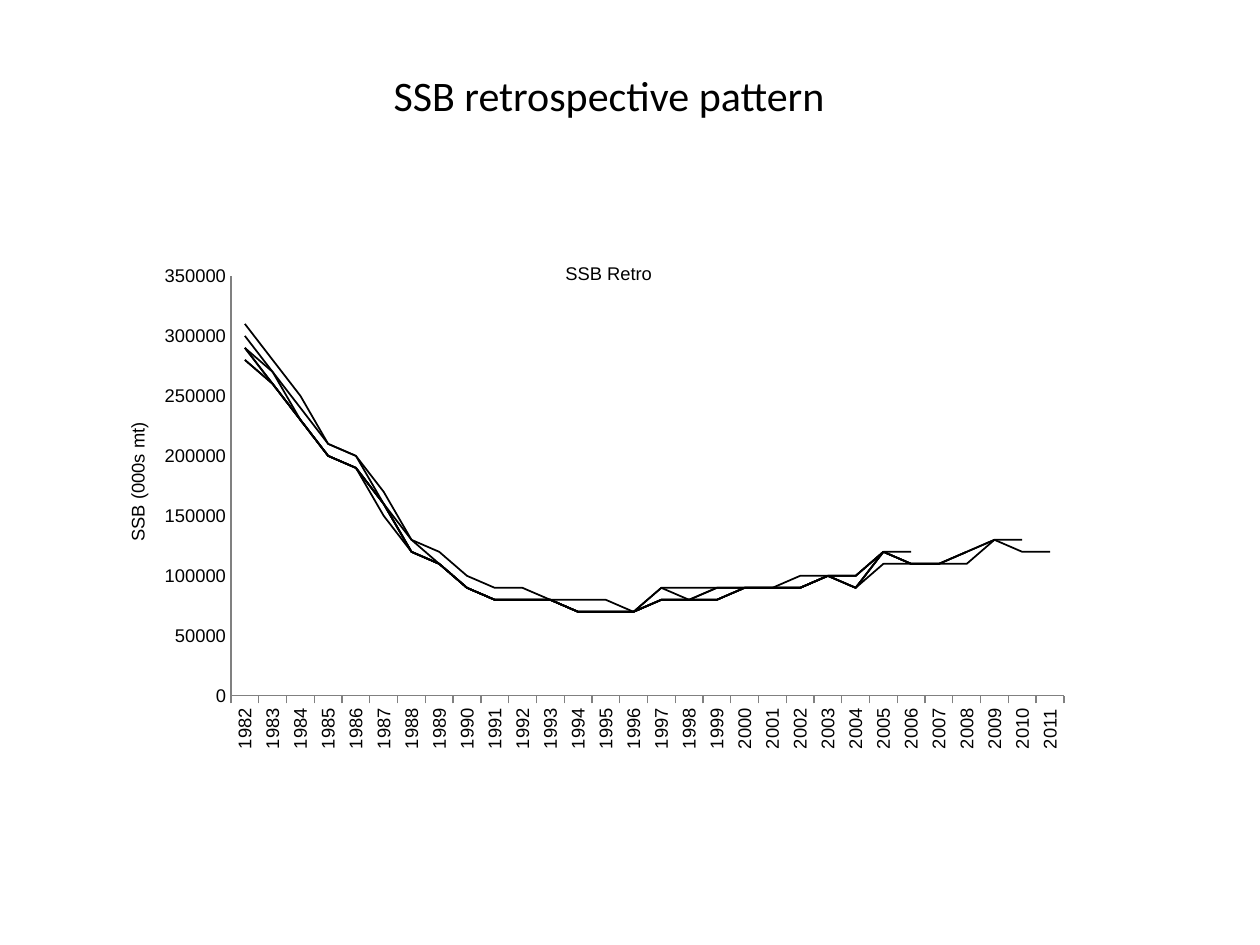
"""Build the slide with the SSB retrospective line chart."""
from dataclasses import dataclass

from lxml import etree
from pptx import Presentation
from pptx import util as u
from pptx.chart.data import CategoryChartData
from pptx.dml.color import RGBColor
from pptx.enum import chart as charts, text
from pptx.oxml.ns import qn

EMU_PER_PX = 914400 / 126
FIRST_YEAR, LAST_YEAR = 1982, 2011
VALUE_STEP = 10000


@dataclass(frozen=True)
class Theme:
    ink: RGBColor = RGBColor(0, 0, 0)
    axis: RGBColor = RGBColor(0x80, 0x80, 0x80)
    heading_font: str = "Calibri"
    chart_font: str = "Arial"
    heading_size: float = 24
    chart_size: float = 10.5
    line_width: float = 1


@dataclass(frozen=True)
class Box:
    left: int
    top: int
    width: int
    height: int

    def emu(self) -> tuple:
        return tuple(px(n) for n in (self.left, self.top, self.width, self.height))


@dataclass(frozen=True)
class Run:
    name: str
    steps: tuple


THEME = Theme()
HEADING_BOX = Box(315, 63, 588, 63)
CHART_BOX = Box(105, 210, 1040, 609)
RUNS = (
    Run("Series 1", (28, 26, 23, 20, 19, 15, 12, 11, 9, 8, 8, 8, 7, 7, 7,
                     8, 8, 8, 9, 9, 9, 10, 10, 12)),
    Run("Series 2", (29, 26, 23, 20, 19, 16, 12, 11, 9, 8, 8, 8, 7, 7, 7,
                     8, 8, 8, 9, 9, 9, 10, 10, 12, 12)),
    Run("Series 3", (29, 26, 23, 20, 19, 16, 12, 11, 9, 8, 8, 8, 7, 7, 7,
                     8, 8, 8, 9, 9, 9, 10, 9, 12, 11, 11)),
    Run("Series 4", (30, 27, 24, 21, 20, 16, 13, 11, 9, 8, 8, 8, 7, 7, 7,
                     9, 8, 9, 9, 9, 9, 10, 9, 12, 11, 11, 12)),
    Run("Series 5", (31, 28, 25, 21, 20, 17, 13, 12, 10, 9, 9, 8, 8, 8, 7,
                     9, 9, 9, 9, 9, 10, 10, 10, 12, 11, 11, 11, 13)),
    Run("Series 6", (29, 27, 23, 20, 19, 16, 12, 11, 9, 8, 8, 8, 7, 7, 7,
                     8, 8, 9, 9, 9, 9, 10, 9, 12, 11, 11, 12, 13, 13)),
    Run("Series 7", (28, 26, 23, 20, 19, 16, 12, 11, 9, 8, 8, 8, 7, 7, 7,
                     8, 8, 8, 9, 9, 9, 10, 9, 11, 11, 11, 12, 13, 12, 12)),
)


def px(length: int) -> u.Emu:
    return u.Emu(round(length * EMU_PER_PX))


def style_font(font, name: str, size: float) -> None:
    font.name, font.size, font.bold = name, u.Pt(size), False
    font.color.rgb = THEME.ink


def place(parent, **lengths: int) -> None:
    layout = parent.find(qn("c:layout"))
    if layout is None:
        layout = etree.Element(qn("c:layout"))
        parent.insert(0, layout)
    manual = etree.SubElement(layout, qn("c:manualLayout"))
    if "w" in lengths:
        etree.SubElement(manual, qn("c:layoutTarget"), val="inner")
    for side in ("x", "y"):
        etree.SubElement(manual, qn(f"c:{side}Mode"), val="edge")
    for key, length in lengths.items():
        whole = CHART_BOX.width if key in "xw" else CHART_BOX.height
        etree.SubElement(manual, qn(f"c:{key}"), val=str(length / whole))


def set_title(title, words: str, x: int, y: int) -> None:
    title.text_frame.text = words
    style_font(title.text_frame.paragraphs[0].runs[0].font, THEME.chart_font, THEME.chart_size)
    holder = title.text_frame._txBody.getparent().getparent()
    place(holder, x=x, y=y)
    holder.find(qn("c:overlay")).set("val", "1")


def turn_upright(body) -> None:
    body.set("rot", "-5400000")
    body.set("vert", "horz")


def style_axis(axis, tick) -> None:
    axis.has_major_gridlines = False
    axis.major_tick_mark = tick
    axis.minor_tick_mark = charts.XL_TICK_MARK.NONE
    axis.format.line.color.rgb = THEME.axis
    style_font(axis.tick_labels.font, THEME.chart_font, THEME.chart_size)


def add_heading(page, words: str) -> None:
    frame = page.shapes.add_textbox(*HEADING_BOX.emu()).text_frame
    frame.word_wrap = True
    frame.text = words
    para = frame.paragraphs[0]
    para.alignment = text.PP_ALIGN.CENTER
    style_font(para.runs[0].font, THEME.heading_font, THEME.heading_size)


def add_retro_chart(page) -> None:
    data = CategoryChartData(number_format="0")
    data.categories = [str(year) for year in range(FIRST_YEAR, LAST_YEAR + 1)]
    for run in RUNS:
        data.add_series(run.name, [step * VALUE_STEP for step in run.steps])
    chart = page.shapes.add_chart(charts.XL_CHART_TYPE.LINE, *CHART_BOX.emu(), data).chart
    style_font(chart.font, THEME.chart_font, THEME.chart_size)
    chart.has_legend = False
    set_title(chart.chart_title, "SSB Retro", 457, 48)
    plot = chart.plots[0]
    plot.vary_by_categories = False
    for series in plot.series:
        series.smooth = False
        series.marker.style = charts.XL_MARKER_STYLE.NONE
        series.format.line.color.rgb = THEME.ink
        series.format.line.width = u.Pt(THEME.line_width)
    years, biomass = chart.category_axis, chart.value_axis
    style_axis(years, charts.XL_TICK_MARK.OUTSIDE)
    style_axis(biomass, charts.XL_TICK_MARK.NONE)
    biomass.minimum_scale, biomass.maximum_scale, biomass.major_unit = 0, 350000, 50000
    biomass.tick_labels.number_format = "0"
    biomass.tick_labels.number_format_is_linked = False
    set_title(biomass.axis_title, "SSB (000s mt)", 17, 209)
    turn_upright(chart.element.xpath(".//c:catAx/c:txPr/a:bodyPr")[0])
    turn_upright(chart.element.xpath(".//c:valAx/c:title//a:bodyPr")[0])
    place(chart.element.xpath(".//c:plotArea")[0], x=126, y=66, w=833, h=420)


def main() -> None:
    deck = Presentation()
    deck.slide_width, deck.slide_height = px(1260), px(945)
    page = deck.slides.add_slide(deck.slide_layouts[6])
    add_heading(page, "SSB retrospective pattern")
    add_retro_chart(page)
    deck.save("out.pptx")


if __name__ == "__main__":
    main()
